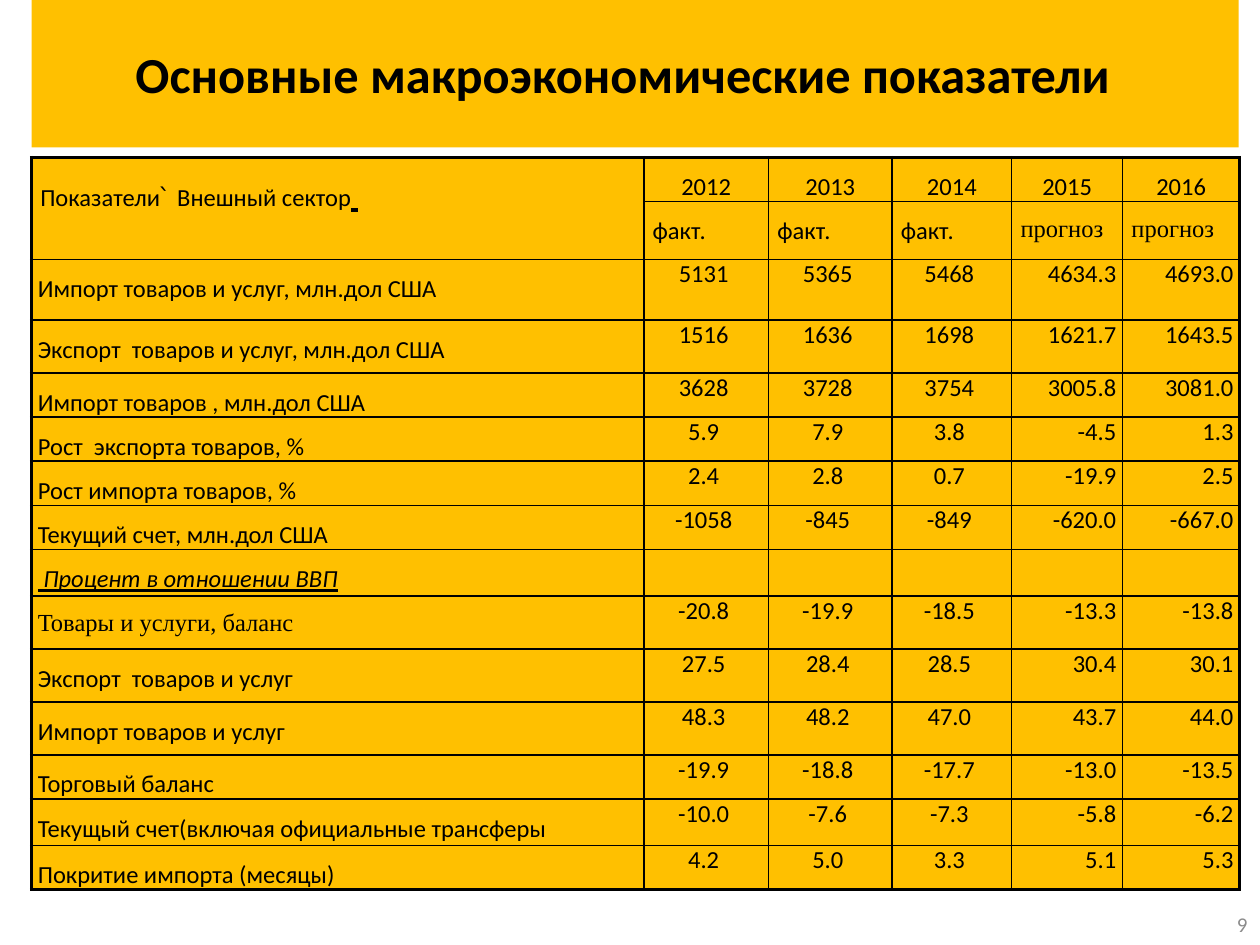
from lxml import etree
from pptx import Presentation
from pptx import util as u
from pptx.dml.color import RGBColor
from pptx.enum import text
from pptx.oxml.ns import qn

AMBER = RGBColor(0xFF, 0xC0, 0x00)
BLACK = RGBColor(0x00, 0x00, 0x00)
GRAY = RGBColor(0x8C, 0x8C, 0x8C)
SANS = "Calibri"
SERIF = "Times New Roman"
LEFT, CENTER, RIGHT = text.PP_ALIGN.LEFT, text.PP_ALIGN.CENTER, text.PP_ALIGN.RIGHT

COLUMNS = [4.86, 0.99, 0.98, 0.95, 0.88, 0.93]
ROWS = [0.34, 0.46, 0.48, 0.42, 0.34, 0.34, 0.34, 0.34, 0.37,
        0.42, 0.42, 0.42, 0.34, 0.37, 0.34]
YEARS = ["2012", "2013", "2014", "2015", "2016"]
STATUSES = ["факт."] * 3 + ["прогноз"] * 2
SECTION = " Процент в отношении ВВП"
BALANCE = "Товары и услуги, баланс"
INDICATORS = [
    ("Импорт товаров и услуг, млн.дол США", "5131 5365 5468 4634.3 4693.0"),
    ("Экспорт  товаров и услуг, млн.дол США", "1516 1636 1698 1621.7 1643.5"),
    ("Импорт товаров , млн.дол США", "3628 3728 3754 3005.8 3081.0"),
    ("Рост  экспорта товаров, %", "5.9 7.9 3.8 -4.5 1.3"),
    ("Рост импорта товаров, %", "2.4 2.8 0.7 -19.9 2.5"),
    ("Текущий счет, млн.дол США", "-1058 -845 -849 -620.0 -667.0"),
    (SECTION, ""),
    (BALANCE, "-20.8 -19.9 -18.5 -13.3 -13.8"),
    ("Экспорт  товаров и услуг", "27.5 28.4 28.5 30.4 30.1"),
    ("Импорт товаров и услуг", "48.3 48.2 47.0 43.7 44.0"),
    ("Торговый баланс", "-19.9 -18.8 -17.7 -13.0 -13.5"),
    ("Текущый счет(включая официальные трансферы", "-10.0 -7.6 -7.3 -5.8 -6.2"),
    ("Покритие импорта (месяцы)", "4.2 5.0 3.3 5.1 5.3"),
]


class SlideBuilder:
    def __init__(self, presentation):
        self.slide = presentation.slides.add_slide(presentation.slide_layouts[5])
        self.style = {"name": SANS, "size": 14, "color": BLACK}

    def add_text(self, paragraph, content, **changes):
        run = paragraph.add_run()
        run.text = content
        values = {**self.style, **changes}
        run.font.color.rgb = values.pop("color")
        values["size"] = u.Pt(values["size"])
        for name, value in values.items():
            setattr(run.font, name, value)

    def title(self, content, left, top, width, height):
        shape = self.slide.shapes.title
        shape.left, shape.top = u.Inches(left), u.Inches(top)
        shape.width, shape.height = u.Inches(width), u.Inches(height)
        shape.fill.solid()
        shape.fill.fore_color.rgb = AMBER
        frame = shape.text_frame
        frame.auto_size = text.MSO_AUTO_SIZE.NONE
        frame.vertical_anchor = text.MSO_ANCHOR.MIDDLE
        frame.margin_right = u.Inches(0.29)
        paragraph = frame.paragraphs[0]
        paragraph.alignment = CENTER
        self.add_text(paragraph, content, size=28.8, bold=True)

    def page_number(self, content, left, top, width, height):
        shape = self.slide.shapes.add_textbox(*map(u.Inches, (left, top, width, height)))
        frame = shape.text_frame
        frame.word_wrap = True
        frame.vertical_anchor = text.MSO_ANCHOR.MIDDLE
        paragraph = frame.paragraphs[0]
        paragraph.alignment = RIGHT
        self.add_text(paragraph, content, size=12, color=GRAY)

    def table(self, left, top, columns, rows):
        frame = self.slide.shapes.add_table(
            len(rows), len(columns), u.Inches(left), u.Inches(top),
            u.Inches(sum(columns)), u.Inches(sum(rows)))
        table = frame.table
        table.first_row = table.horz_banding = False
        for column, width in zip(table.columns, columns):
            column.width = u.Inches(width)
        for row, height in zip(table.rows, rows):
            row.height = u.Inches(height)
        last_row, last_column = len(rows) - 1, len(columns) - 1
        for row in range(len(rows)):
            for column in range(len(columns)):
                cell = table.cell(row, column)
                self.borders(cell, {"L": column == 0, "R": column == last_column,
                                    "T": row == 0, "B": row == last_row})
                cell.fill.solid()
                cell.fill.fore_color.rgb = AMBER
        return table

    def borders(self, cell, outer_sides):
        properties = cell._tc.get_or_add_tcPr()
        for side, outer in outer_sides.items():
            line = etree.SubElement(properties, qn(f"a:ln{side}"),
                                    w=str(u.Pt(2.25 if outer else 1)))
            fill = etree.SubElement(line, qn("a:solidFill"))
            etree.SubElement(fill, qn("a:srgbClr"), val=str(BLACK))

    def cell(self, cell, content, alignment=LEFT, spacing=1.5, inset=0.05,
             right=None, **changes):
        margins = {"margin_left": inset, "margin_right": right or inset,
                   "margin_top": 0, "margin_bottom": 0}
        for name, value in margins.items():
            setattr(cell, name, u.Inches(value))
        paragraph = cell.text_frame.paragraphs[0]
        paragraph.alignment = alignment
        paragraph.line_spacing = spacing
        if content:
            self.add_text(paragraph, content, **changes)
        else:
            paragraph.font.size = u.Pt(self.style["size"])
        return paragraph


def main():
    presentation = Presentation()
    presentation.slide_width = u.Inches(10)
    presentation.slide_height = u.Inches(7.5)
    builder = SlideBuilder(presentation)
    builder.title("Основные макроэкономические показатели", 0.25, 0, 9.58, 1.17)
    builder.page_number("9", 9.08, 7.17, 0.92, 0.33)

    table = builder.table(0.25, 1.25, COLUMNS, ROWS)
    table.cell(0, 0).merge(table.cell(1, 0))
    heading = builder.cell(table.cell(0, 0), "Показатели՝  Внешный сектор", inset=0.07)
    builder.add_text(heading, " ", size=18, italic=True, underline=True)
    for column, (year, status) in enumerate(zip(YEARS, STATUSES), 1):
        builder.cell(table.cell(0, column), year, CENTER, inset=0.07)
        builder.cell(table.cell(1, column), status, inset=0.07,
                     name=SERIF if status == "прогноз" else SANS)

    label_formats = {SECTION: {"italic": True, "underline": True},
                     BALANCE: {"name": SERIF}}
    for row, (label, figures) in enumerate(INDICATORS, 2):
        builder.cell(table.cell(row, 0), label, **label_formats.get(label, {}))
        values = figures.split() or [""] * len(YEARS)
        for column, (value, status) in enumerate(zip(values, STATUSES), 1):
            if status == "прогноз":
                builder.cell(table.cell(row, column), value, RIGHT, spacing=1)
            else:
                builder.cell(table.cell(row, column), value, CENTER, spacing=1, right=0.09)

    presentation.save("out.pptx")


if __name__ == "__main__":
    main()
